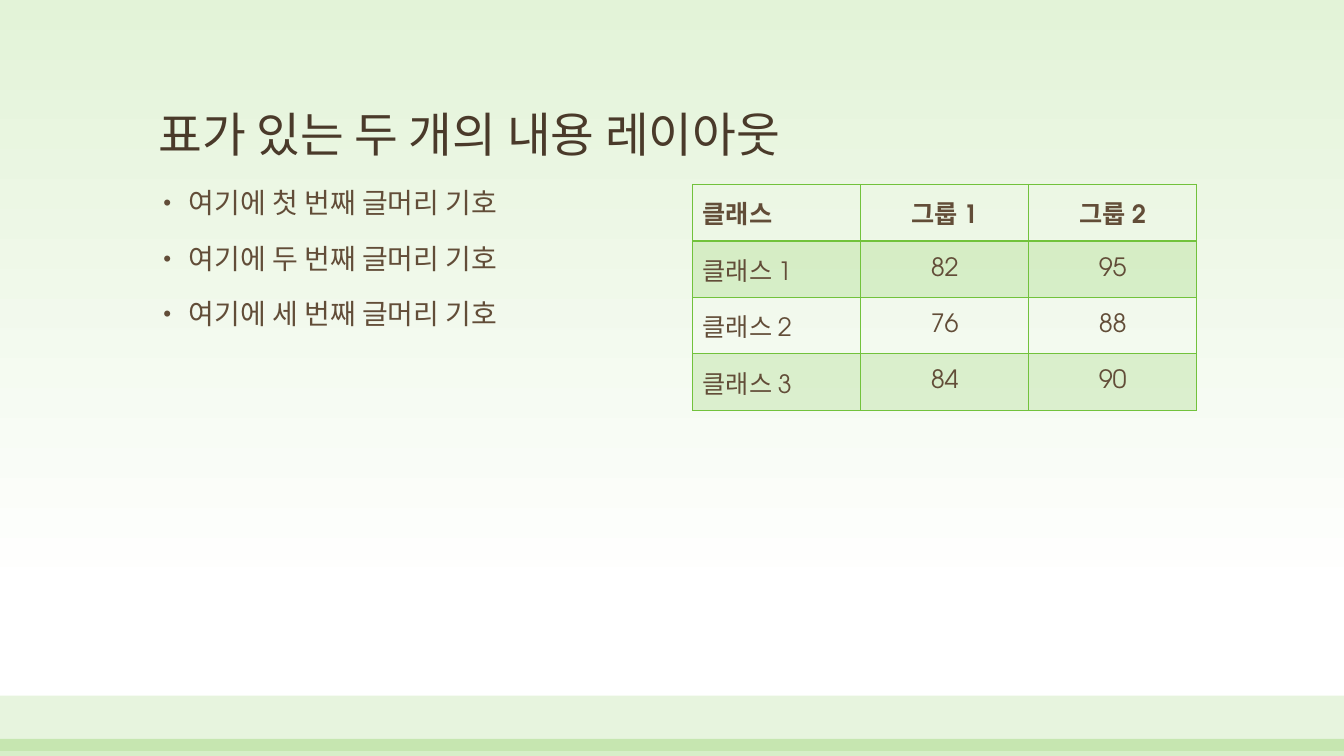
from lxml import etree
from pptx import Presentation
from pptx.dml.color import RGBColor
from pptx.enum.shapes import MSO_SHAPE
from pptx.enum.text import MSO_ANCHOR, MSO_AUTO_SIZE, PP_ALIGN
from pptx.oxml.ns import qn
from pptx.util import Inches, Pt

RECTANGLE = MSO_SHAPE.RECTANGLE
MIDDLE, BOTTOM, TOP = MSO_ANCHOR.MIDDLE, MSO_ANCHOR.BOTTOM, MSO_ANCHOR.TOP
LEFT, CENTER = PP_ALIGN.LEFT, PP_ALIGN.CENTER
NO_AUTOFIT = MSO_AUTO_SIZE.NONE

COLORS = {"sky": "E3F3D8", "white": "FFFFFF", "green": "72C23C",
          "title": "4A3A2A", "text": "624D38"}
HANGUL_FONT = "Noto Sans CJK KR"
TABLE_FONT = "TeX Gyre Adventor"

# Slide and content grid, in inches
SLIDE_W, SLIDE_H = 13.33, 7.5
MARGIN = 1.47
COLUMN_W, GUTTER = 5, 0.4
CONTENT_TOP = 1.83
ROW_H = 0.56

TITLE = "표가 있는 두 개의 내용 레이아웃"
BULLETS = [f"여기에 {order} 번째 글머리 기호" for order in ("첫", "두", "세")]
SCORES = [
    ("클래스", "그룹 1", "그룹 2"),
    ("클래스 1", "82", "95"),
    ("클래스 2", "76", "88"),
    ("클래스 3", "84", "90"),
]


def rgb(name):
    return RGBColor.from_string(COLORS[name])


def add_xml(parent, tag, **attributes):
    return etree.SubElement(parent, qn(tag), attributes)


def fill_solid(fill, color, opacity):
    """Fill with a colour at an opacity given in percent."""
    fill.solid()
    fill.fore_color.rgb = rgb(color)
    color_xml = fill._xPr.find(qn("a:solidFill"))[0]
    add_xml(color_xml, "a:alpha", val=str(opacity * 1000))


def format_paragraph(paragraph, size, color, font, align=LEFT, bold=False):
    paragraph.alignment = align
    for run in paragraph.runs:
        run.font.size = Pt(size)
        run.font.bold = bold
        run.font.color.rgb = rgb(color)
        run.font.name = font
        add_xml(run.font._element, "a:ea", typeface=HANGUL_FONT)


def paint_background(slide):
    fill = slide.background.fill
    fill.gradient()
    fill.gradient_angle = 270
    for stop, color, position in zip(fill.gradient_stops, ("sky", "white"), (0, 0.79)):
        stop.color.rgb = rgb(color)
        stop.position = position


def add_ground_band(slide, top, height, opacity):
    band = slide.shapes.add_shape(RECTANGLE, 0, Inches(top),
                                  Inches(SLIDE_W), Inches(height))
    band.shadow.inherit = False
    band.line.fill.background()
    fill_solid(band.fill, "green", opacity)


def place(placeholder, left, top, width, height, anchor):
    placeholder.left, placeholder.top = Inches(left), Inches(top)
    placeholder.width, placeholder.height = Inches(width), Inches(height)
    frame = placeholder.text_frame
    frame.vertical_anchor = anchor
    frame.auto_size = NO_AUTOFIT
    frame.word_wrap = True
    return frame


def write_title(slide):
    frame = place(slide.shapes.title, MARGIN, 0.48,
                  SLIDE_W - 2 * MARGIN, 1.19, BOTTOM)
    frame.text = TITLE
    heading = frame.paragraphs[0]
    heading.line_spacing = 0.9
    format_paragraph(heading, 34, "title", HANGUL_FONT)


def write_bullets(slide):
    frame = place(slide.placeholders[1], MARGIN, CONTENT_TOP, COLUMN_W, 4.75, TOP)
    frame.text = "\n".join(BULLETS)
    for item in frame.paragraphs:
        item.line_spacing = 0.9
        item.space_before = Pt(18)
        format_paragraph(item, 20, "text", HANGUL_FONT)
        properties = item._p.get_or_add_pPr()
        properties.set("marL", str(Inches(0.3)))
        properties.set("indent", str(Inches(-0.25)))
        add_xml(properties, "a:buSzPct", val="80000")
        add_xml(properties, "a:buFont", typeface="Arial")
        add_xml(properties, "a:buChar", char="•")


def draw_borders(cell, widths):
    properties = cell._tc.get_or_add_tcPr()
    for side, width in widths.items():
        line = add_xml(properties, f"a:ln{side}", w=str(Pt(width)))
        add_xml(add_xml(line, "a:solidFill"), "a:srgbClr", val=COLORS["green"])


def add_score_table(slide):
    rows, columns = len(SCORES), len(SCORES[0])
    table = slide.shapes.add_table(
        rows, columns, Inches(MARGIN + COLUMN_W + GUTTER), Inches(CONTENT_TOP),
        Inches(COLUMN_W), Inches(ROW_H * rows)).table
    table.first_row = table.horz_banding = False
    for r, record in enumerate(SCORES):
        header = r == 0
        for c, value in enumerate(record):
            cell = table.cell(r, c)
            cell.text = value
            cell.vertical_anchor = MIDDLE
            format_paragraph(cell.text_frame.paragraphs[0], 18, "text", TABLE_FONT,
                             CENTER if c else LEFT, header)
            draw_borders(cell, {"L": 1, "R": 1, "T": 2 if r == 1 else 1,
                                "B": 2 if header else 1})
            # Odd rows are tinted
            if r % 2:
                fill_solid(cell.fill, "green", 20)
            else:
                cell.fill.background()


def main():
    deck = Presentation()
    deck.slide_width, deck.slide_height = Inches(SLIDE_W), Inches(SLIDE_H)
    slide = deck.slides.add_slide(deck.slide_layouts[1])

    # Backdrop
    paint_background(slide)
    add_ground_band(slide, 0.92 * SLIDE_H, 0.55, 17)
    add_ground_band(slide, SLIDE_H - 0.17, 0.17, 28)

    # Content
    write_title(slide)
    write_bullets(slide)
    add_score_table(slide)
    deck.save("out.pptx")


if __name__ == "__main__":
    main()
